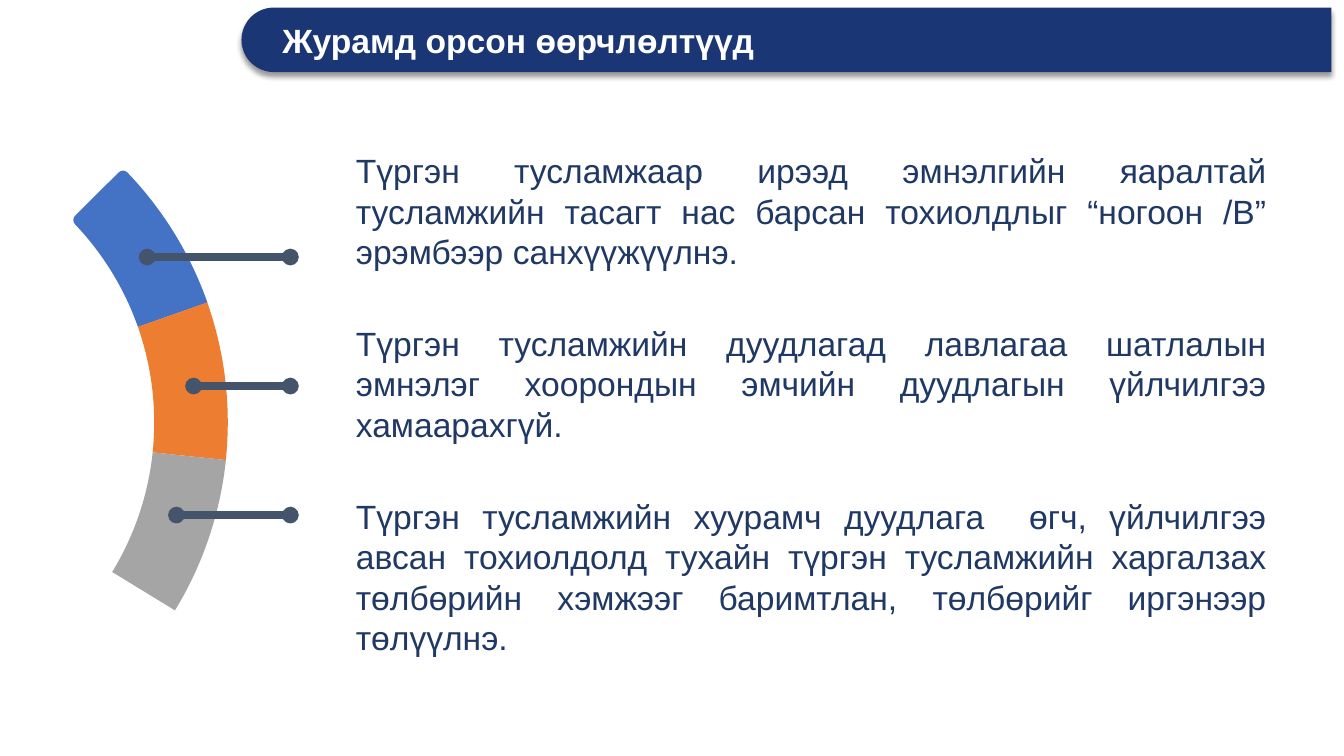
"""Build the slide on changes made to the emergency care regulation."""
from math import cos, radians, sin, tan

from lxml import etree
from pptx import Presentation
from pptx.dml.color import RGBColor
from pptx.enum.shapes import MSO_CONNECTOR, MSO_SHAPE
from pptx.enum.text import MSO_ANCHOR, MSO_AUTO_SIZE, PP_ALIGN
from pptx.oxml.ns import qn
from pptx.util import Inches, Pt

STRAIGHT = MSO_CONNECTOR.STRAIGHT
ROUND_TOP = MSO_SHAPE.ROUND_2_SAME_RECTANGLE
LEFT, JUSTIFY = PP_ALIGN.LEFT, PP_ALIGN.JUSTIFY
MIDDLE = MSO_ANCHOR.MIDDLE
NO_FIT, GROW = MSO_AUTO_SIZE.NONE, MSO_AUTO_SIZE.SHAPE_TO_FIT_TEXT

TITLE = "Журамд орсон өөрчлөлтүүд"
CHANGES = [
    ("4472C4", 1.46, 1.26,
     "Түргэн тусламжаар ирээд эмнэлгийн яаралтай тусламжийн тасагт нас "
     "барсан тохиолдлыг “ногоон /B” эрэмбээр санхүүжүүлнэ."),
    ("ED7D31", 1.92, 1.26,
     "Түргэн тусламжийн дуудлагад лавлагаа шатлалын эмнэлэг хоорондын "
     "эмчийн дуудлагын үйлчилгээ хамаарахгүй."),
    ("A5A5A5", 1.75, 1.67,
     "Түргэн тусламжийн хуурамч дуудлага  өгч, үйлчилгээ авсан тохиолдолд "
     "тухайн түргэн тусламжийн харгалзах төлбөрийн хэмжээг баримтлан, "
     "төлбөрийг иргэнээр төлүүлнэ."),
]
NAVY, TEXT, SLATE, WHITE = "1A3675", "203864", "44546A", "FFFFFF"
CX, CY, INNER, OUTER = -1.32, 4.19, 2.85, 3.58
ARC_START, ARC_STEP, CORNER = -44.8, 25.4, 0.06
LINE_TOP, LINE_STEP, LINE_END = 2.55, 1.28, 2.88
TEXT_LEFT, TEXT_TOP, TEXT_STEP, TEXT_WIDTH = 3.48, 1.46, 1.715, 9.13


def rgb(value):
    return RGBColor.from_string(value)


def style_text(p, text, color, align, spacing, bold=False):
    p.text = text
    p.alignment = align
    p.line_spacing = spacing
    p.space_before = Pt(0)
    font = p.runs[0].font
    font.name, font.size, font.bold = "Arial", Pt(24), bold
    font.color.rgb = rgb(color)


def add_title_bar(slide):
    sp = slide.shapes.add_shape(ROUND_TOP, Inches(7.48), Inches(-5.01),
                                Inches(0.64), Inches(10.81))
    sp.rotation = 270
    sp.adjustments[0], sp.adjustments[1] = 0.5, 0
    sp.fill.solid()
    sp.fill.fore_color.rgb = rgb(NAVY)
    sp.line.fill.background()
    sp.shadow.inherit = False
    effects = sp._element.spPr.find(qn("a:effectLst"))
    shadow = etree.SubElement(effects, qn("a:outerShdw"), blurRad=str(Pt(4)),
                              dist=str(Pt(3)), dir="5400000", rotWithShape="0")
    color = etree.SubElement(shadow, qn("a:srgbClr"), val="000000")
    etree.SubElement(color, qn("a:alpha"), val="40000")


def polar(radius, degrees):
    a = radians(degrees)
    return CX + radius * cos(a), CY + radius * sin(a)


def arc(radius, start, end):
    """Return the four Bezier points of an arc."""
    pull = 4 / 3 * tan(radians(end - start) / 4) * radius
    (x0, y0), (x3, y3) = polar(radius, start), polar(radius, end)
    a, b = radians(start), radians(end)
    return [(x0, y0), (x0 - pull * sin(a), y0 + pull * cos(a)),
            (x3 + pull * sin(b), y3 - pull * cos(b)), (x3, y3)]


def rounded(first, apex, last):
    """Return the four Bezier points that round a corner."""
    def toward(p):
        return tuple(v + 0.55 * (c - v) for v, c in zip(p, apex))
    return [first, toward(first), toward(last), last]


def band_curves(start, end, corner):
    outer_start = start + corner / radians(OUTER)
    inner_start = start + corner / radians(INNER)
    curves = [arc(OUTER, outer_start, end), arc(INNER, end, inner_start)]
    if corner:
        curves.insert(0, rounded(polar(OUTER - corner, start), polar(OUTER, start),
                                 curves[0][0]))
        curves.append(rounded(curves[-1][-1], polar(INNER, start),
                              polar(INNER + corner, start)))
    return curves


def add_band(slide, i, color):
    start = ARC_START + i * ARC_STEP
    curves = band_curves(start, start + ARC_STEP, CORNER if i == 0 else 0)
    points = [(Inches(x), Inches(y)) for curve in curves for x, y in curve]
    builder = slide.shapes.build_freeform(*points[0])
    builder.add_line_segments(points[1:])
    sp = builder.convert_to_shape()
    lines = list(sp._element.iter(qn("a:lnTo")))
    for k in range(0, 4 * len(curves), 4):
        bend = etree.Element(qn("a:cubicBezTo"))
        lines[k].addprevious(bend)
        for line in lines[k:k + 3]:
            bend.append(line[0])
            line.getparent().remove(line)
    sp.fill.solid()
    sp.fill.fore_color.rgb = rgb(color)
    sp.line.fill.background()
    sp.shadow.inherit = False


def add_pointer(slide, i, left):
    y = Inches(LINE_TOP + i * LINE_STEP)
    line = slide.shapes.add_connector(STRAIGHT, Inches(left), y, Inches(LINE_END), y)
    line.line.color.rgb = rgb(SLATE)
    line.line.width = Pt(6)
    ln = line.line._get_or_add_ln()
    for tag in ("a:headEnd", "a:tailEnd"):
        etree.SubElement(ln, qn(tag), type="oval", w="sm", len="sm")
    etree.SubElement(line._element.spPr, qn("a:effectLst"))


def add_change(slide, i, height, text):
    box = slide.shapes.add_textbox(Inches(TEXT_LEFT), Inches(TEXT_TOP + i * TEXT_STEP),
                                   Inches(TEXT_WIDTH), Inches(height))
    tf = box.text_frame
    tf.word_wrap = True
    tf.auto_size = GROW
    tf.margin_left = tf.margin_right = Inches(0.05)
    tf.margin_top = tf.margin_bottom = Inches(0.03)
    style_text(tf.paragraphs[0], text, TEXT, JUSTIFY, 1.0)


def set_title(slide):
    title = slide.shapes.title
    title.left, title.top = Inches(2.7), Inches(0.1)
    title.width, title.height = Inches(10.36), Inches(0.64)
    tf = title.text_frame
    tf.auto_size = NO_FIT
    tf.vertical_anchor = MIDDLE
    style_text(tf.paragraphs[0], TITLE, WHITE, LEFT, 0.9, bold=True)
    slide.shapes._spTree.append(title._element)


def main():
    prs = Presentation()
    prs.slide_width, prs.slide_height = Inches(13.33), Inches(7.5)
    slide = prs.slides.add_slide(prs.slide_layouts[5])
    add_title_bar(slide)
    for i, (color, _, _, _) in enumerate(CHANGES):
        add_band(slide, i, color)
    for i, (_, left, height, text) in enumerate(CHANGES):
        add_pointer(slide, i, left)
        add_change(slide, i, height, text)
    set_title(slide)
    prs.save("out.pptx")


if __name__ == "__main__":
    main()
